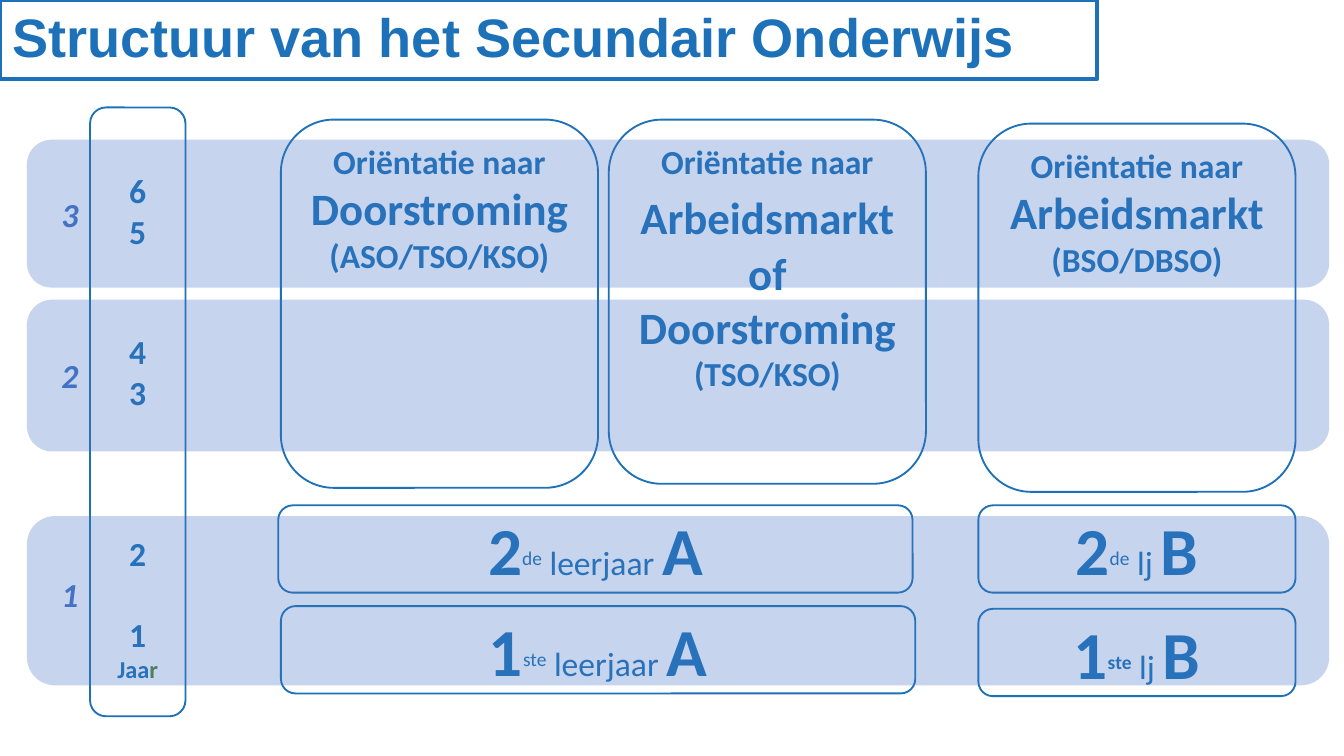
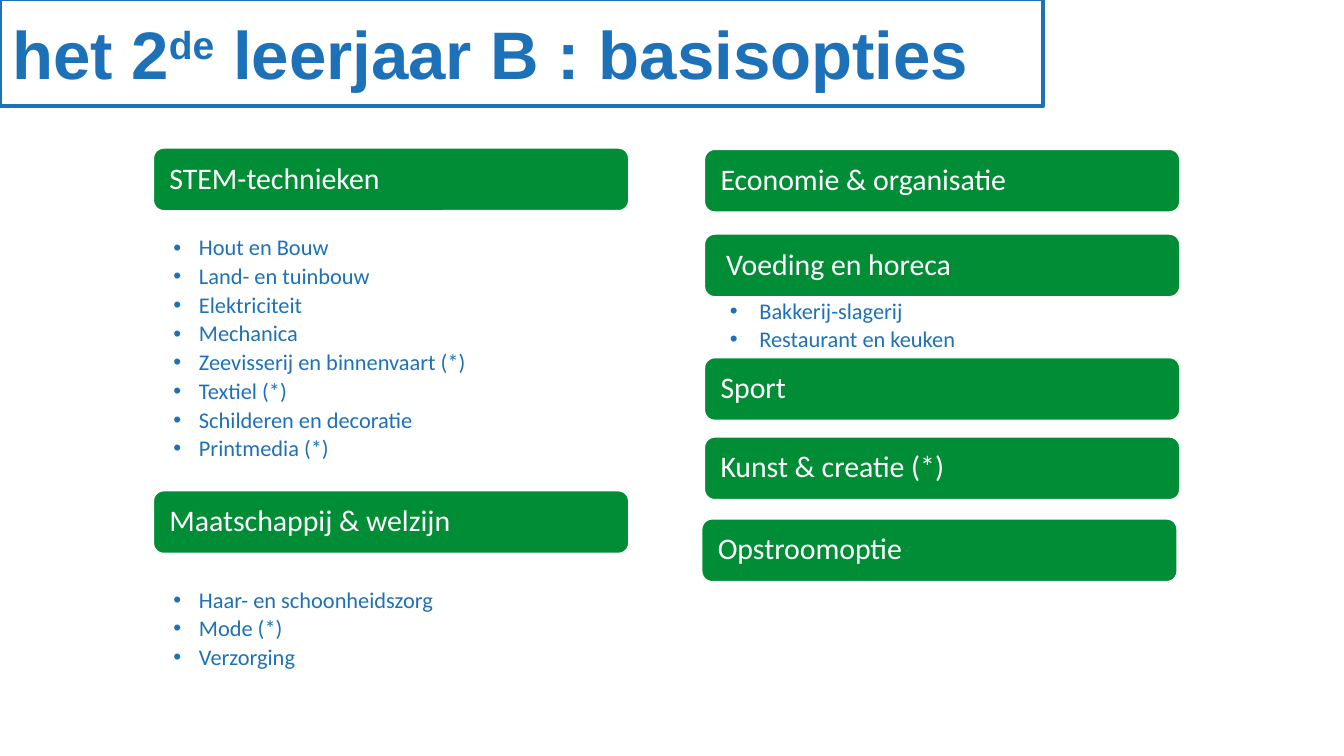
from lxml import etree
from pptx import Presentation
from pptx.dml.color import RGBColor
from pptx.enum.shapes import MSO_SHAPE
from pptx.enum.text import MSO_ANCHOR, MSO_AUTO_SIZE, PP_ALIGN
from pptx.oxml.ns import qn
from pptx.util import Emu, Pt

ROUNDED = MSO_SHAPE.ROUNDED_RECTANGLE
TOP, MIDDLE = MSO_ANCHOR.TOP, MSO_ANCHOR.MIDDLE
LEFT, CENTER = PP_ALIGN.LEFT, PP_ALIGN.CENTER

EMU_PER_PX = 9144  # 100 px to the inch
BLUE, BAND_BLUE, GREEN, WHITE, OLIVE = "1D71B8", "4472C4", "008D36", "FFFFFF", "548235"
TITLE_LAYOUT, LISTS_LAYOUT = 5, 4
INSETS = (9, 4, 9, 4)

# A run is plain text or (text, overrides); a paragraph is a list of runs.
SUPER = {"size": 18, "bold": False, "baseline": 30}
SMALL = {"size": 18, "bold": False}

# Slide 1: (box, paragraphs of (size, runs))
TRACKS = [
    ((209, 89, 236, 274), [(18, ["Oriëntatie naar"]), (24, ["Doorstroming"]),
                           (18, ["(ASO/TSO/KSO)"])]),
    ((453, 89, 236, 271), [(24, [("Oriëntatie naar ", {"size": 18}), "Arbeidsmarkt",
                                 (" ", {"size": 29}), "of Doorstroming"]),
                           (18, ["(TSO/KSO)"])]),
    ((728, 92, 236, 274), [(18, ["Oriëntatie naar"]), (24, ["Arbeidsmarkt"]),
                           (18, ["(BSO/DBSO)"])]),
]
FIRST_GRADE = [
    ((209, 451, 472, 65), ["1", ("ste", SUPER), (" leerjaar ", SMALL), "A"]),
    ((207, 376, 472, 65), ["2", ("de", SUPER), (" leerjaar ", SMALL), "A"]),
    ((728, 376, 236, 65), ["2", ("de", SUPER), (" lj ", SMALL), "B"]),
    ((728, 453, 236, 65), ["1", ("ste", {**SUPER, "bold": True}), (" lj ", SMALL), "B"]),
]
YEAR_COLUMN = (67, 80, 71, 453)
YEARS = [("6", 0), ("5", 0), ("4", 43), ("3", 0), ("2", 65), ("1", 21.5)]  # year, points above
GRADES = [("1", 384, 126, 422), ("2", 223, 113, 259), ("3", 104, 110, 139)]  # top, height, number top

# Slide 2: (text, left, top, left inset)
OPTIONS = [
    ("STEM-technieken", 114, 110, 10),
    ("Maatschappij & welzijn", 114, 365, 10),
    ("Economie & organisatie", 524, 111, 10),
    ("Voeding en horeca", 524, 174, 14),
    ("Sport", 524, 266, 10),
    ("Kunst & creatie (*)", 524, 325, 10),
    ("Opstroomoptie", 522, 386, 10),
]
# placeholder index: (box, hanging indent, items)
OPTION_LISTS = {
    2: ((117, 174, 354, 169), 19, [
        "Hout en Bouw", "Land- en tuinbouw", "Elektriciteit", "Mechanica",
        "Zeevisserij en binnenvaart (*)", "Textiel (*)",
        "Schilderen en decoratie", "Printmedia (*)"]),
    1: ((117, 436, 354, 63), 19, ["Haar- en schoonheidszorg", "Mode (*)", "Verzorging"]),
    4: ((531, 221, 354, 47), 22, ["Bakkerij-slagerij", "Restaurant en keuken"]),
}


def px(value):
    return Emu(value * EMU_PER_PX)


def rgb(color):
    return RGBColor.from_string(color)


def place(shape, box):
    shape.left, shape.top, shape.width, shape.height = map(px, box)


def set_frame(shape, anchor, insets=INSETS):
    frame = shape.text_frame
    frame.word_wrap = True
    frame.auto_size = MSO_AUTO_SIZE.NONE
    frame.vertical_anchor = anchor
    (frame.margin_left, frame.margin_top,
     frame.margin_right, frame.margin_bottom) = map(px, insets)
    return frame


def set_outline(shape, color, width):
    shape.line.color.rgb = rgb(color)
    shape.line.width = Pt(width)


def add_bullet(paragraph, indent):
    properties = paragraph._p.get_or_add_pPr()
    properties.set("marL", str(px(indent)))
    properties.set("indent", str(-px(indent)))
    etree.SubElement(properties, qn("a:buFont"), typeface="Arial")
    etree.SubElement(properties, qn("a:buChar"), char="•")


def write(frame, runs, size, color=BLUE, bold=True, italic=False, align=CENTER,
          font="Calibri", spacing=1.0, before=0, after=0, bullet_indent=None):
    """Fill the frame's empty first paragraph, or append a new one."""
    paragraph = frame.paragraphs[0]
    if paragraph.runs:
        paragraph = frame.add_paragraph()
    if bullet_indent:
        add_bullet(paragraph, bullet_indent)
    paragraph.alignment = align
    paragraph.line_spacing = spacing
    paragraph.space_before, paragraph.space_after = Pt(before), Pt(after)
    style = paragraph.font
    style.name, style.size, style.bold, style.italic = font, Pt(size), bold, italic
    style.color.rgb = rgb(color)
    for item in runs:
        text, changes = (item, {}) if isinstance(item, str) else item
        run = paragraph.add_run()
        run.text = text
        if "size" in changes:
            run.font.size = Pt(changes["size"])
        if "bold" in changes:
            run.font.bold = changes["bold"]
        if "color" in changes:
            run.font.color.rgb = rgb(changes["color"])
        if "baseline" in changes:
            run._r.get_or_add_rPr().set("baseline", str(changes["baseline"] * 1000))


def add_title(slide, box, runs, size, spacing):
    title = slide.shapes.title
    place(title, box)
    set_outline(title, BLUE, 2.25)
    write(set_frame(title, MIDDLE), runs, size, align=LEFT, font="Arial", spacing=spacing)


def add_rounded(slide, box, fill=None, outline=None):
    shape = slide.shapes.add_shape(ROUNDED, *map(px, box))
    shape.shadow.inherit = False
    if fill:
        shape.fill.solid()
        shape.fill.fore_color.rgb = rgb(fill)
    else:
        shape.fill.background()
    if outline:
        set_outline(shape, outline, 1)
    else:
        shape.line.fill.background()
    return shape


def add_year_column(slide):
    column = add_rounded(slide, YEAR_COLUMN, outline=BLUE)
    frame = set_frame(column, MIDDLE, (9, 26, 9, 4))
    for year, gap in YEARS:
        write(frame, [year], 18, before=gap)
    write(frame, ["Jaa", ("r", {"color": OLIVE})], 13)


def add_grade(slide, grade, top, height, number_top):
    band = add_rounded(slide, (20, top, 969, height), fill=BAND_BLUE)
    color = band._element.spPr.find(qn("a:solidFill"))[0]
    etree.SubElement(color, qn("a:alpha"), val="30000")
    number = slide.shapes.add_textbox(*map(px, (40, number_top, 24, 40)))
    write(set_frame(number, MIDDLE, (0, 0, 0, 0)), [grade], 18, BAND_BLUE, italic=True)


def build_structure(prs):
    slide = prs.slides.add_slide(prs.slide_layouts[TITLE_LAYOUT])
    add_title(slide, (0, 0, 816, 59), ["Structuur van het Secundair Onderwijs"], 29, 0.9)
    for box, paragraphs in TRACKS:
        frame = set_frame(add_rounded(slide, box, outline=BLUE), TOP)
        for size, runs in paragraphs:
            write(frame, runs, size)
    add_year_column(slide)
    for box, runs in FIRST_GRADE:
        write(set_frame(add_rounded(slide, box, outline=BLUE), MIDDLE), runs, 36)
    for grade in GRADES:
        add_grade(slide, *grade)


def build_options(prs):
    slide = prs.slides.add_slide(prs.slide_layouts[LISTS_LAYOUT])
    add_title(slide, (0, -1, 776, 80),
              ["het 2", ("de", {"baseline": 30}), " leerjaar B : basisopties"], 36, 1.0)
    for option, left, top, inset in OPTIONS:
        bar = add_rounded(slide, (left, top, 354, 47), GREEN, WHITE)
        write(set_frame(bar, MIDDLE, (inset, 9, 9, 9)), [option], 16, WHITE,
              bold=False, align=LEFT, spacing=0.9)
    for placeholder in list(slide.placeholders):
        index = placeholder.placeholder_format.idx
        if index in OPTION_LISTS:
            box, indent, items = OPTION_LISTS[index]
            place(placeholder, box)
            frame = set_frame(placeholder, TOP, (12, 2, 12, 2))
            for item in items:
                write(frame, [item], 12, bold=False, align=LEFT, spacing=0.9,
                      after=2.4, bullet_indent=indent)
        elif index != 0:
            placeholder._element.getparent().remove(placeholder._element)


def main():
    prs = Presentation()
    prs.slide_width = px(1000)
    prs.slide_height = Emu(prs.slide_width * 9 // 16)
    build_structure(prs)
    build_options(prs)
    prs.save("out.pptx")


if __name__ == "__main__":
    main()
